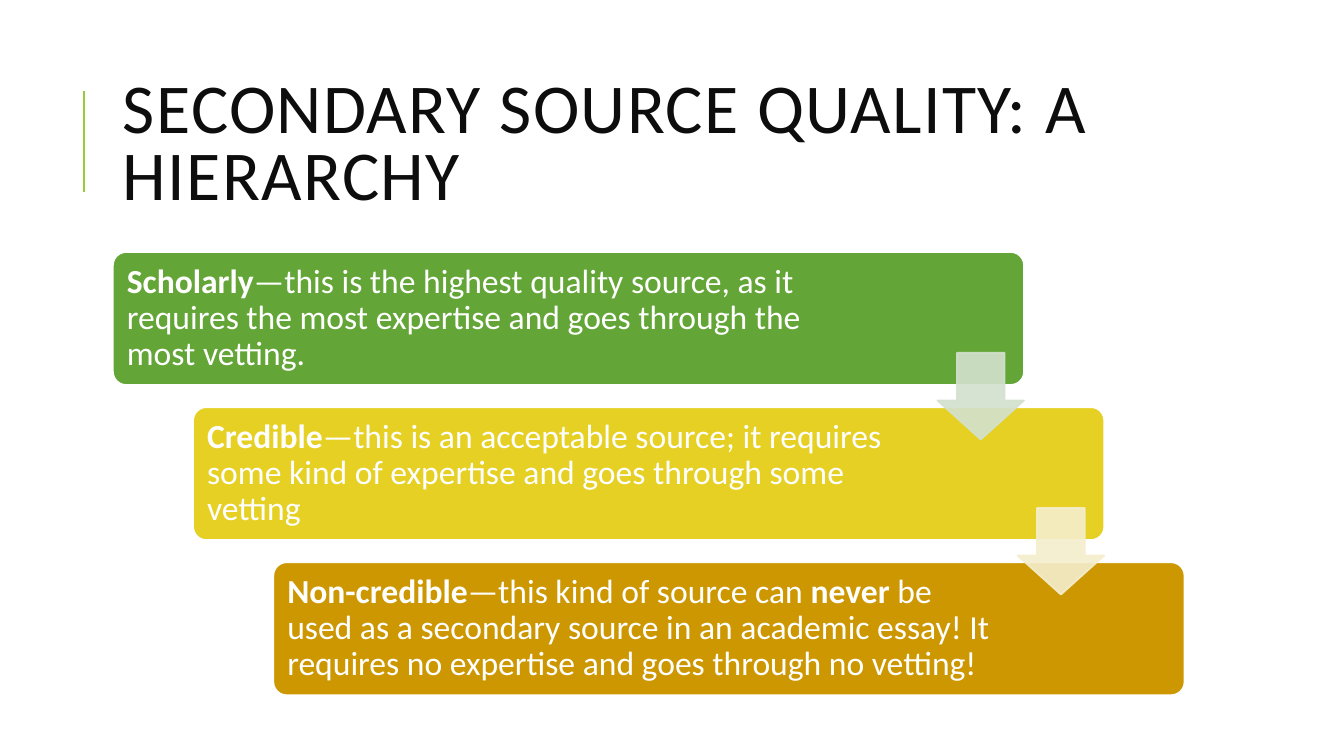
from lxml.etree import SubElement
from pptx import Presentation
from pptx.dml.color import RGBColor
from pptx.enum.shapes import MSO_CONNECTOR, MSO_SHAPE
from pptx.enum.text import MSO_ANCHOR, PP_ALIGN
from pptx.oxml.ns import qn
from pptx.util import Pt


def color(value):
    return RGBColor.from_string(value)


class SlideBuilder:
    font = "Calibri"
    line_width = 1.25

    def __init__(self, page):
        self.page = page

    def rule(self, x, top, bottom, line, width):
        connector = self.page.shapes.add_connector(
            MSO_CONNECTOR.STRAIGHT, Pt(x), Pt(bottom), Pt(x), Pt(top))
        connector.line.color.rgb = color(line)
        connector.line.width = Pt(width)
        SubElement(connector._element.spPr, qn("a:effectLst"))

    def shape(self, kind, frame, fill, line, adjustments, opacity=100):
        shape = self.page.shapes.add_shape(kind, *map(Pt, frame))
        shape.shadow.inherit = False
        for index, value in enumerate(adjustments):
            shape.adjustments[index] = value
        shape.fill.solid()
        shape.fill.fore_color.rgb = color(fill)
        shape.line.color.rgb = color(line)
        shape.line.width = Pt(self.line_width)
        if opacity < 100:
            for node in shape._element.spPr.iter(qn("a:srgbClr")):
                SubElement(node, qn("a:alpha"), val=str(opacity * 1000))

    def text(self, frame, runs, size, ink, line_spacing, inset=7.2, tracking=0):
        box = self.page.shapes.add_textbox(*map(Pt, frame))
        body = box.text_frame
        body.word_wrap = True
        body.vertical_anchor = MSO_ANCHOR.MIDDLE
        body.margin_left = body.margin_right = Pt(7.2)
        body.margin_top = body.margin_bottom = Pt(inset)
        para = body.paragraphs[0]
        para.alignment = PP_ALIGN.LEFT
        para.line_spacing = line_spacing
        for content, bold in runs:
            span = para.add_run()
            span.text = content
            span.font.name = self.font
            span.font.size = Pt(size)
            span.font.bold = bold
            span.font.color.rgb = color(ink)
            if tracking:
                span.font._element.set("spc", str(tracking * 100))


LEFT, TOP = 80.64, 180
CARD_WIDTH, CARD_HEIGHT = 650.9, 95
STEP_X, STEP_Y = 57.3, 110.8
ARROW_LEFT, ARROW_TOP, ARROW_SIZE = 669.6, 252, 61.9
PADDING = 2.9

LEVELS = [
    ("63A537", 547.9, [
        ("Scholarly", True),
        ("—this is the highest quality source, as it requires the most "
         "expertise and goes through the most vetting.", False)]),
    ("E6D024", 525.6, [
        ("Credible", True),
        ("—this is an acceptable source; it requires some kind of expertise "
         "and goes through some vetting", False)]),
    ("CC9700", 525.6, [
        ("Non-credible", True),
        ("—this kind of source can ", False),
        ("never", True),
        (" be used as a secondary source in an academic essay! It requires "
         "no expertise and goes through no vetting!", False)]),
]
ARROW_FILLS = ["D3E1CE", "F5EECD"]


def main():
    deck = Presentation()
    deck.slide_width, deck.slide_height = Pt(960), Pt(540)
    builder = SlideBuilder(deck.slides.add_slide(deck.slide_layouts[6]))

    builder.rule(60, 65, 137, "99CB38", 1.5)
    builder.text((LEFT, 46, 765.4, 118),
                 [("SECONDARY SOURCE QUALITY: A HIERARCHY", False)],
                 50, "0D0D0D", 0.8, inset=3.6, tracking=1)

    for index, (fill, text_width, runs) in enumerate(LEVELS):
        x, y = LEFT + index * STEP_X, TOP + index * STEP_Y
        builder.shape(MSO_SHAPE.ROUNDED_RECTANGLE,
                      (x, y, CARD_WIDTH, CARD_HEIGHT), fill, "FFFFFF", [0.1])
        builder.text((x + PADDING, y + PADDING, text_width,
                      CARD_HEIGHT - 2 * PADDING), runs, 24, "FFFFFF", 0.9)

    for index, fill in enumerate(ARROW_FILLS):
        builder.shape(MSO_SHAPE.DOWN_ARROW,
                      (ARROW_LEFT + index * STEP_X, ARROW_TOP + index * STEP_Y,
                       ARROW_SIZE, ARROW_SIZE),
                      fill, fill, [0.55, 0.45], opacity=90)

    deck.save("out.pptx")


if __name__ == "__main__":
    main()
